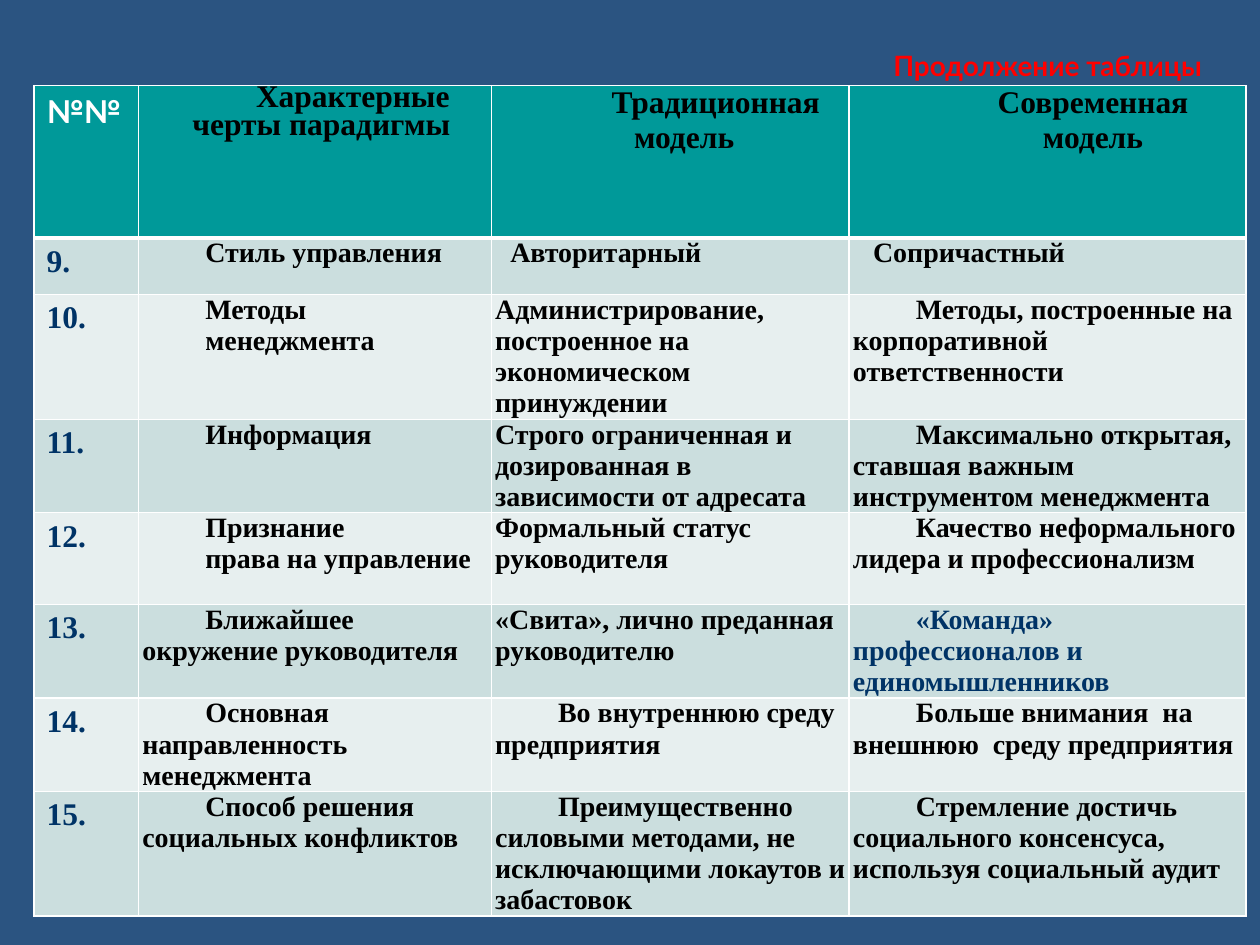
"""Build a slide with a table comparing the traditional and modern management models."""
from dataclasses import dataclass

import pptx
import pptx.dml.color
import pptx.enum.text
import pptx.oxml
import pptx.oxml.ns
import pptx.util

ALIGN = pptx.enum.text.PP_ALIGN
ANCHOR = pptx.enum.text.MSO_ANCHOR
WIDTH, HEIGHT = pptx.util.Inches(10), pptx.util.Inches(7.5)
COLORS = {
    "background": "2B5481", "title": "FF0000", "header": "009999",
    "odd": "CBDEDE", "even": "E7EFEF", "white": "FFFFFF",
    "black": "000000", "navy": "003366",
}
SERIF, SANS = "Times New Roman", "Lato"
COLUMN_PERCENTS = (8.3, 28, 28.4, 31.5)
ROW_PERCENTS = (16.1, 6, 13.2, 9.87, 9.73, 9.87, 9.73, 13.2)


@dataclass(frozen=True)
class Entry:
    """Text of one cell, with its look; indents are in inches."""
    text: str
    indent: float = 0.5
    margin: float = 0
    size: float = 16
    color: str = "black"
    font: str = SERIF
    align: ALIGN = ALIGN.LEFT
    spacing: float | None = None
    tight: bool = True


def number(text: str, color: str = "navy", font: str = SERIF) -> Entry:
    """Describe a cell of the numbering column."""
    return Entry(text, indent=0, size=18, color=color, font=font, tight=False)


def heading(text: str, margin: float = 0.22, spacing: float | None = None) -> Entry:
    """Describe a centred column heading."""
    return Entry(text, margin=margin, size=18, align=ALIGN.CENTER, spacing=spacing)


ROWS = (
    (number("№№", "white", SANS), heading("Характерные черты парадигмы", 0.1, 16.1),
     heading("Традиционная модель"), heading("Современная\nмодель")),
    (number("9."), Entry("Стиль управления"),
     Entry("Авторитарный", indent=0.12), Entry("Сопричастный", indent=0.16)),
    (number("10."), Entry("Методы\nменеджмента"),
     Entry("Администрирование, построенное на экономическом принуждении", indent=0),
     Entry("Методы, построенные на корпоративной ответственности")),
    (number("11."), Entry("Информация"),
     Entry("Строго ограниченная и дозированная в зависимости от адресата", indent=0),
     Entry("Максимально открытая, ставшая важным инструментом менеджмента")),
    (number("12."), Entry("Признание\nправа на управление"),
     Entry("Формальный статус руководителя", indent=0),
     Entry("Качество неформального лидера и профессионализм")),
    (number("13."), Entry("Ближайшее окружение руководителя"),
     Entry("«Свита», лично преданная руководителю", indent=0),
     Entry("«Команда» профессионалов и единомышленников", color="navy")),
    (number("14."), Entry("Основная направленность менеджмента"),
     Entry("Во внутреннюю среду предприятия"),
     Entry("Больше внимания  на внешнюю  среду предприятия")),
    (number("15."), Entry("Способ решения социальных конфликтов"),
     Entry("Преимущественно силовыми методами, не исключающими локаутов и забастовок"),
     Entry("Стремление достичь социального консенсуса, используя социальный аудит")),
)


def across(percent: float) -> int:
    """Return a percentage of the slide's width."""
    return round(WIDTH * percent / 100)


def down(percent: float) -> int:
    """Return a percentage of the slide's height."""
    return round(HEIGHT * percent / 100)


def rgb(name: str) -> pptx.dml.color.RGBColor:
    """Look up a named colour."""
    return pptx.dml.color.RGBColor.from_string(COLORS[name])


def format_font(font: pptx.text.text.Font, name: str, size: float, color: str) -> None:
    """Apply a bold face, size and colour to a font."""
    font.name, font.size, font.bold = name, pptx.util.Pt(size), True
    font.color.rgb = rgb(color)


def add_borders(cell: pptx.table._Cell, top: float, bottom: float) -> None:
    """Draw white borders around a cell, with widths in points."""
    properties = cell._tc.get_or_add_tcPr()
    for place, (side, width) in enumerate((("L", 1), ("R", 1), ("T", top), ("B", bottom))):
        properties.insert(place, pptx.oxml.parse_xml(
            f'<a:ln{side} {pptx.oxml.ns.nsdecls("a")} w="{pptx.util.Pt(width)}"><a:solidFill>'
            f'<a:srgbClr val="{COLORS["white"]}"/></a:solidFill></a:ln{side}>'))


def fill_cell(cell: pptx.table._Cell, entry: Entry, background: str) -> None:
    """Write and format one cell."""
    cell.fill.solid()
    cell.fill.fore_color.rgb = rgb(background)
    cell.vertical_anchor = ANCHOR.TOP
    if entry.tight:
        cell.margin_left = cell.margin_right = pptx.util.Inches(0.03)
        cell.margin_top = cell.margin_bottom = 0
    cell.text_frame.text = entry.text
    for para in cell.text_frame.paragraphs:
        para.alignment = entry.align
        if entry.spacing:
            para.line_spacing = pptx.util.Pt(entry.spacing)
        properties = para._p.get_or_add_pPr()
        properties.set("marL", str(pptx.util.Inches(entry.margin)))
        properties.set("indent", str(pptx.util.Inches(entry.indent)))
        format_font(para.font, entry.font, entry.size, entry.color)


def add_title(page: pptx.slide.Slide) -> None:
    """Place the right-aligned title above the table."""
    title = page.shapes.title
    title.left, title.top = across(3.5), down(3.73)
    title.width, title.height = across(92.9), down(6.27)
    title.text_frame.text = "Продолжение таблицы"
    title.text_frame.vertical_anchor = ANCHOR.MIDDLE
    para = title.text_frame.paragraphs[0]
    para.alignment = ALIGN.RIGHT
    format_font(para.font, SANS, 16, "title")


def add_comparison(page: pptx.slide.Slide) -> None:
    """Draw the comparison table."""
    table = page.shapes.add_table(
        len(ROWS), len(COLUMN_PERCENTS), across(2.7), down(9.07),
        across(sum(COLUMN_PERCENTS)), down(sum(ROW_PERCENTS))).table
    for column, percent in zip(table.columns, COLUMN_PERCENTS):
        column.width = across(percent)
    for index, (entries, percent) in enumerate(zip(ROWS, ROW_PERCENTS)):
        table.rows[index].height = down(percent)
        background = "header" if index == 0 else "odd" if index % 2 else "even"
        for cell, entry in zip(table.rows[index].cells, entries):
            fill_cell(cell, entry, background)
            add_borders(cell, top=3 if index == 1 else 1, bottom=3 if index == 0 else 1)


def main() -> None:
    """Create and save the deck."""
    deck = pptx.Presentation()
    deck.slide_width, deck.slide_height = WIDTH, HEIGHT
    page = deck.slides.add_slide(deck.slide_layouts[5])
    page.background.fill.solid()
    page.background.fill.fore_color.rgb = rgb("background")
    add_title(page)
    add_comparison(page)
    deck.save("out.pptx")


if __name__ == "__main__":
    main()
